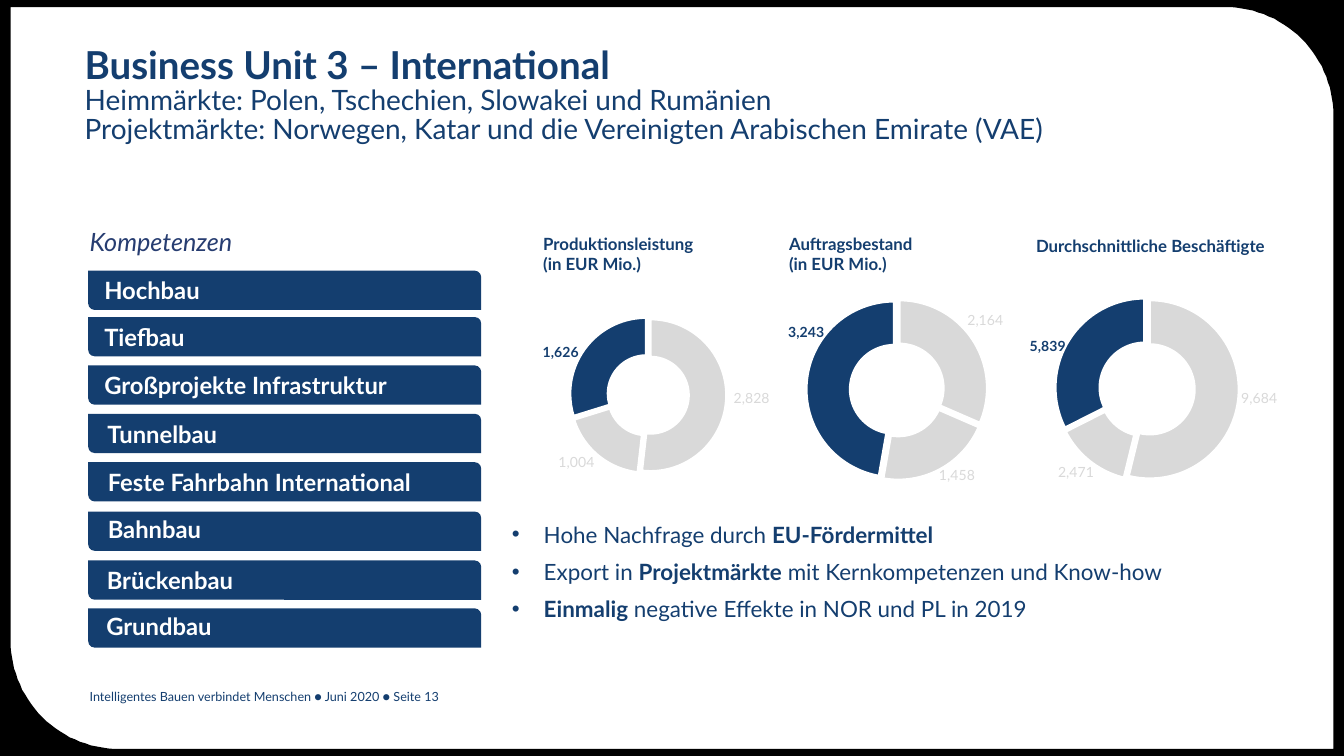
import math

import pptx
import pptx.chart.data
import pptx.dml.color
import pptx.enum.chart
import pptx.enum.shapes
import pptx.enum.text
import pptx.oxml
import pptx.oxml.ns
import pptx.util

PX = 9144
WIDTH, HEIGHT = 2667, 1500
FONT = "Lato"
NAVY, INDIGO, GRAY, WHITE, BLACK = "143E6F", "273D71", "D9D9D9", "FFFFFF", "000000"

COMPETENCES = [
    ("Hochbau", 537, 181, 534),
    ("Tiefbau", 629, 181, 627),
    ("Großprojekte Infrastruktur", 725, 181, 723),
    ("Tunnelbau", 821, 187, 819),
    ("Feste Fahrbahn International", 917, 188, 914),
    ("Bahnbau", 1015, 188, 1008),
    ("Brückenbau", 1112, 186, 1110),
    ("Grundbau", 1207, 185, 1200),
]
CHART_HEADINGS = [
    (["Produktionsleistung", "(in EUR Mio.)"], 1068, 458, 332),
    (["Auftragsbestand", "(in EUR Mio.)"], 1556, 458, 274),
    (["Durchschnittliche Beschäftigte"], 2046, 462, 502),
]
CHARTS = [
    ((1014, 591), (1286, 784), 294, (2828, 1004, 1626), [(1484, 790), (1149, 911), (1119, 704)]),
    ((1510, 581), (1780, 773), 340, (2164, 1458, 3243), [(1948, 639), (1895, 935), (1609, 659)]),
    ((2009, 578), (2276, 772), 345, (9684, 2471, 5839), [(2490, 788), (2141, 929), (2087, 692)]),
]
BULLETS = [
    [("Hohe Nachfrage durch ", False), ("EU-Fördermittel", True)],
    [("Export in ", False), ("Projektmärkte", True), (" mit Kernkompetenzen und Know-how", False)],
    [("Einmalig", True), (" negative Effekte in NOR und PL in 2019", False)],
]


def emu(*lengths):
    return [round(length * PX) for length in lengths]


def color(value):
    return pptx.dml.color.RGBColor.from_string(value)


def paint(shape, fill):
    shape.shadow.inherit = False
    shape.fill.solid()
    shape.fill.fore_color.rgb = color(fill)
    shape.line.fill.background()


def style(font, size, ink, bold=False, italic=False):
    font.name = FONT
    font.size = pptx.util.Pt(size)
    font.color.rgb = color(ink)
    font.bold = bold
    font.italic = italic


def add_text(paragraph, text, **font_format):
    run = paragraph.add_run()
    run.text = text
    style(run.font, **font_format)


def add_lines(paragraph, lines, **font_format):
    for index, line in enumerate(lines):
        if index:
            paragraph.add_line_break()
        add_text(paragraph, line, **font_format)


def add_box(slide, left, top, width, height, margins=(10, 5), wrap=True):
    frame = slide.shapes.add_textbox(*emu(left, top, width, height)).text_frame
    frame.word_wrap = wrap
    frame.margin_left = frame.margin_right = margins[0] * PX
    frame.margin_top = frame.margin_bottom = margins[1] * PX
    return frame


def add_frame(slide):
    left, top, right, bottom, radius = 21, 14, 2646, 1486, 215

    def corner(x, y, start):
        angles = [math.radians(start + 3 * step) for step in range(31)]
        return [(x + radius * math.cos(a), y + radius * math.sin(a)) for a in angles]

    inner = [(left, top)]
    inner += corner(right - radius, top + radius, -90)
    inner += [(right, bottom)]
    inner += corner(left + radius, bottom - radius, 90)
    builder = slide.shapes.build_freeform(0, 0, scale=PX)
    builder.add_line_segments([(WIDTH, 0), (WIDTH, HEIGHT), (0, HEIGHT)])
    builder.move_to(*inner[0])
    builder.add_line_segments(inner[1:])
    paint(builder.convert_to_shape(), BLACK)


def add_title(slide):
    paragraph = add_box(slide, 168, 96, 2375, 363, margins=(0, 0)).paragraphs[0]
    paragraph.line_spacing = 0.85
    add_text(paragraph, "Business Unit 3 – International", size=55, ink=NAVY, bold=True)
    paragraph.add_line_break()
    add_lines(paragraph, [
        "Heimmärkte: Polen, Tschechien, Slowakei und Rumänien",
        "Projektmärkte: Norwegen, Katar und die Vereinigten Arabischen Emirate (VAE)",
    ], size=40, ink=NAVY)


def add_competence(slide, name, bar_top, text_left, text_top):
    kind = pptx.enum.shapes.MSO_SHAPE.ROUND_2_DIAG_RECTANGLE
    bar = slide.shapes.add_shape(kind, *emu(175, bar_top, 780, 78))
    bar._element.spPr.xfrm.set("flipH", "1")
    paint(bar, NAVY)
    frame = add_box(slide, text_left, text_top, 780, 83, margins=(26, 0))
    frame.vertical_anchor = pptx.enum.text.MSO_ANCHOR.MIDDLE
    add_text(frame.paragraphs[0], name, size=34, ink=WHITE, bold=True)


def add_bullets(slide):
    frame = add_box(slide, 1016, 1033, 1475, 220, margins=(0, 0))
    for index, runs in enumerate(BULLETS):
        paragraph = frame.add_paragraph() if index else frame.paragraphs[0]
        if index:
            paragraph.space_before = pptx.util.Pt(15)
        properties = paragraph._p.get_or_add_pPr()
        properties.set("marL", str(63 * PX))
        properties.set("indent", str(-63 * PX))
        properties.append(chart_xml('<a:buFont {} typeface="Arial"/>'))
        properties.append(chart_xml('<a:buChar {} char="•"/>'))
        for text, bold in runs:
            add_text(paragraph, text, size=32, ink=NAVY, bold=bold)


def chart_xml(template):
    return pptx.oxml.parse_xml(template.format(pptx.oxml.ns.nsdecls("a", "c")))


def layout_xml(target="", **numbers):
    values = "".join(f'<c:{name} val="{value:.4f}"/>' for name, value in numbers.items())
    return chart_xml("<c:layout {}><c:manualLayout>" + target + values + "</c:manualLayout></c:layout>")


def add_doughnut(slide, corner, center, diameter, values, label_centers):
    width, height, explosion = 536, 390, 6
    data = pptx.chart.data.CategoryChartData(number_format="#,##0")
    data.categories = ["1", "2", "3"]
    data.add_series("Series 1", values)
    kind = pptx.enum.chart.XL_CHART_TYPE.DOUGHNUT
    chart = slide.shapes.add_chart(kind, *emu(*corner, width, height), data).chart
    chart.has_legend = False
    chart.has_title = False
    style(chart.font, 10, BLACK)
    plot = chart.plots[0]
    plot.vary_by_categories = False
    plot._element.xpath("c:holeSize")[0].set("val", "70")

    side = diameter * (1 + explosion / 100)
    plot_area = plot._element.getparent()
    for layout in plot_area.xpath("c:layout"):
        plot_area.remove(layout)
    plot_area.insert(0, layout_xml(
        '<c:layoutTarget val="inner"/><c:xMode val="edge"/><c:yMode val="edge"/>',
        x=(center[0] - corner[0] - side / 2) / width,
        y=(center[1] - corner[1] - side / 2) / height,
        w=side / width, h=side / height))

    series = plot.series[0]
    series.format.line.color.rgb = color(WHITE)
    series._element.spPr.addnext(chart_xml(f'<c:explosion {{}} val="{explosion}"/>'))
    series.data_labels.show_value = True
    style(series.data_labels.font, 20, "404040")
    total, passed = sum(values), 0
    for index, (value, label_center) in enumerate(zip(values, label_centers)):
        highlighted = index == 2
        ink = NAVY if highlighted else GRAY
        point = series.points[index]
        point.format.fill.solid()
        point.format.fill.fore_color.rgb = color(ink)
        point.format.line.color.rgb = color(WHITE)
        point.format.line.width = pptx.util.Pt(4)
        style(point.data_label.font, 20, ink, bold=highlighted)
        angle = 2 * math.pi * (passed + value / 2) / total
        passed += value
        ring_x = center[0] + 0.375 * diameter * math.sin(angle)
        ring_y = center[1] - 0.375 * diameter * math.cos(angle)
        label_index = series._element.xpath(f"c:dLbls/c:dLbl/c:idx[@val='{index}']")[0]
        label_index.addnext(chart_xml('<c:numFmt {} formatCode="#,##0" sourceLinked="0"/>'))
        label_index.addnext(layout_xml(
            x=(label_center[0] - ring_x) / width, y=(label_center[1] - ring_y) / height))
    for leader in series._element.xpath("c:dLbls/c:showLeaderLines"):
        leader.set("val", "0")


def main():
    presentation = pptx.Presentation()
    presentation.slide_width, presentation.slide_height = emu(WIDTH, HEIGHT)
    slide = presentation.slides.add_slide(presentation.slide_layouts[6])
    add_frame(slide)
    add_title(slide)
    for competence in COMPETENCES:
        add_competence(slide, *competence)
    add_bullets(slide)
    footer = add_box(slide, 168, 1362, 1155, 41)
    add_text(footer.paragraphs[0], "Intelligentes Bauen verbindet Menschen ● Juni 2020 ● Seite 13", size=18, ink=NAVY)
    heading = add_box(slide, 168, 444, 325, 71)
    add_text(heading.paragraphs[0], "Kompetenzen", size=36, ink=INDIGO, italic=True)
    for lines, left, top, width in CHART_HEADINGS:
        frame = add_box(slide, left, top, width, 41 * len(lines) + 9, wrap=False)
        add_lines(frame.paragraphs[0], lines, size=24, ink=NAVY, bold=True)
    for chart in CHARTS:
        add_doughnut(slide, *chart)
    presentation.save("out.pptx")


if __name__ == "__main__":
    main()
